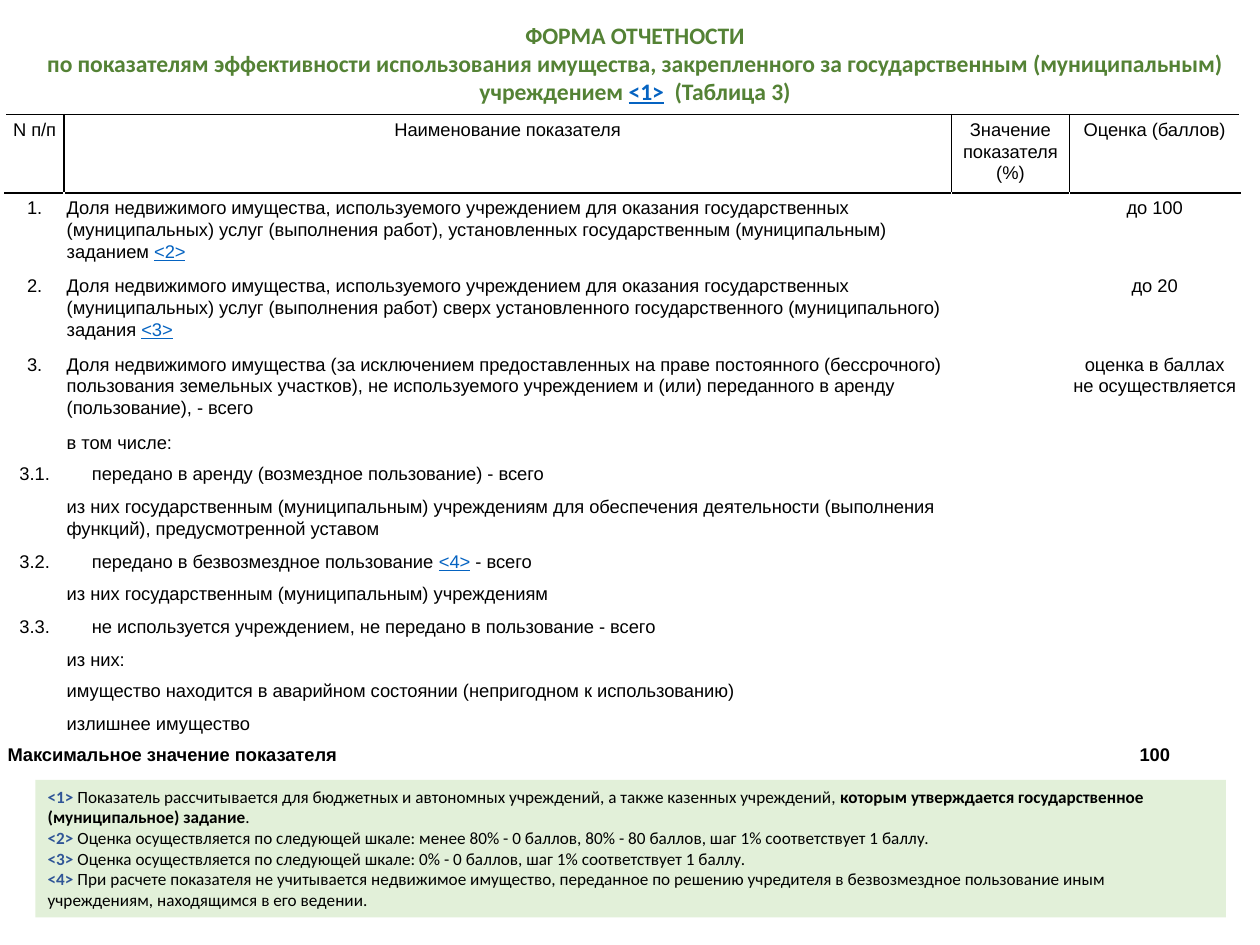
import pptx
import pptx.util
from lxml import etree
from pptx.dml.color import RGBColor
from pptx.enum.shapes import MSO_SHAPE
from pptx.enum.text import MSO_ANCHOR, PP_ALIGN
from pptx.oxml.ns import qn
from pptx.util import Inches, Pt

BLACK = RGBColor(0x00, 0x00, 0x00)
GREEN = RGBColor(0x54, 0x82, 0x35)
PALE_GREEN = RGBColor(0xE2, 0xF0, 0xD9)
BLUE = RGBColor(0x2F, 0x55, 0x97)
LINK = RGBColor(0x05, 0x63, 0xC1)

PLAIN, REFERENCE, STRONG, MARKER = "plain", "reference", "strong", "marker"

TITLE = [
    [("ФОРМА ОТЧЕТНОСТИ", PLAIN)],
    [("по показателям эффективности использования имущества, закрепленного за государственным (муниципальным)", PLAIN)],
    [("учреждением ", PLAIN), ("<1>", REFERENCE), ("  (Таблица 3)", PLAIN)],
]

HEADER = ("N п/п", "Наименование показателя", "Значение показателя (%)", "Оценка (баллов)")
COLUMN_WIDTHS = (0.47, 7.04, 0.94, 1.35)

INDICATORS = [
    (0.58, "1.", [("Доля недвижимого имущества, используемого учреждением для оказания государственных (муниципальных) услуг (выполнения работ), установленных государственным (муниципальным) заданием ", PLAIN), ("<2>", REFERENCE)], "до 100"),
    (0.58, "2.", [("Доля недвижимого имущества, используемого учреждением для оказания государственных (муниципальных) услуг (выполнения работ) сверх установленного государственного (муниципального) задания ", PLAIN), ("<3>", REFERENCE)], "до 20"),
    (0.58, "3.", [("Доля недвижимого имущества (за исключением предоставленных на праве постоянного (бессрочного) пользования земельных участков), не используемого учреждением и (или) переданного в аренду (пользование), - всего", PLAIN)], "оценка в баллах не осуществляется"),
    (0.23, "", [("в том числе:", PLAIN)], ""),
    (0.26, "3.1.", [("передано в аренду (возмездное пользование) - всего", PLAIN)], ""),
    (0.41, "", [("из них государственным (муниципальным) учреждениям для обеспечения деятельности (выполнения функций), предусмотренной уставом", PLAIN)], ""),
    (0.26, "3.2.", [("передано в безвозмездное пользование ", PLAIN), ("<4>", REFERENCE), (" - всего", PLAIN)], ""),
    (0.26, "", [("из них государственным (муниципальным) учреждениям", PLAIN)], ""),
    (0.26, "3.3.", [("не используется учреждением, не передано в пользование - всего", PLAIN)], ""),
    (0.23, "", [("из них:", PLAIN)], ""),
    (0.26, "", [("имущество находится в аварийном состоянии (непригодном к использованию)", PLAIN)], ""),
    (0.23, "", [("излишнее имущество", PLAIN)], ""),
]
TOTAL = (0.23, "Максимальное значение показателя", "100")

NOTES = [
    [("<1> ", MARKER), ("Показатель рассчитывается для бюджетных и автономных учреждений, а также казенных учреждений, ", PLAIN), ("которым утверждается государственное (муниципальное) задание", STRONG), (".", PLAIN)],
    [("<2> ", MARKER), ("Оценка осуществляется по следующей шкале: менее 80% - 0 баллов, 80% - 80 баллов, шаг 1% соответствует 1 баллу.", PLAIN)],
    [("<3> ", MARKER), ("Оценка осуществляется по следующей шкале: 0% - 0 баллов, шаг 1% соответствует 1 баллу.", PLAIN)],
    [("<4> ", MARKER), ("При расчете показателя не учитывается недвижимое имущество, переданное по решению учредителя в безвозмездное пользование иным учреждениям, находящимся в его ведении.", PLAIN)],
]


def set_font(paragraph, name, size, color, bold=False):
    font = paragraph.font
    font.name, font.size, font.bold = name, Pt(size), bold
    font.color.rgb = color


def add_spans(paragraph, spans):
    for text, style in spans:
        span = paragraph.add_run()
        span.text = text
        if style == REFERENCE:
            span.font.color.rgb = LINK
            span.font.underline = True
        elif style == MARKER:
            span.font.color.rgb = BLUE
        if style in (STRONG, MARKER):
            span.font.bold = True


def add_borders(cell, sides):
    properties = cell._tc.get_or_add_tcPr()
    for side in sides:
        line = etree.SubElement(properties, qn(f"a:ln{side}"), w=str(Pt(1)))
        fill = etree.SubElement(line, qn("a:solidFill"))
        etree.SubElement(fill, qn("a:srgbClr"), val=str(BLACK))


def fill_cell(cell, spans, align, sides="", bold=False, indent=0):
    cell.margin_left = cell.margin_right = Inches(0.02)
    cell.margin_top = cell.margin_bottom = Inches(0.03)
    add_borders(cell, sides)
    cell.fill.background()
    para = cell.text_frame.paragraphs[0]
    para.alignment = align
    para.line_spacing = 1.07
    if indent:
        para._p.get_or_add_pPr().set("marL", str(Inches(indent)))
        para._p.get_or_add_pPr().set("indent", "0")
    set_font(para, "Arial", 10.5, BLACK, bold)
    add_spans(para, spans)


def add_title(page):
    box = page.shapes.add_textbox(Inches(0.08), Inches(0.09), Inches(9.92), Inches(0.82))
    frame = box.text_frame
    frame.word_wrap = True
    frame.vertical_anchor = MSO_ANCHOR.MIDDLE
    para = frame.paragraphs[0]
    para.alignment = PP_ALIGN.CENTER
    set_font(para, "Calibri", 13.5, GREEN, True)
    for index, spans in enumerate(TITLE):
        if index:
            para.add_line_break()
        add_spans(para, spans)


def add_indicator_table(page):
    heights = [0.35] + [row[0] for row in INDICATORS] + [TOTAL[0]]
    table = page.shapes.add_table(
        len(heights), len(COLUMN_WIDTHS), Inches(0.04), Inches(0.91),
        Inches(sum(COLUMN_WIDTHS)), Inches(sum(heights))).table
    table.first_row = table.horz_banding = False
    for column, width in zip(table.columns, COLUMN_WIDTHS):
        column.width = Inches(width)
    for row, height in zip(table.rows, heights):
        row.height = Inches(height)

    for column, (label, sides) in enumerate(zip(HEADER, ("RTB", "LRTB", "LRTB", "LTB"))):
        fill_cell(table.cell(0, column), [(label, PLAIN)], PP_ALIGN.CENTER, sides)

    for row, (_, number, name, score) in enumerate(INDICATORS, 1):
        sides = "T" if row == 1 else ""
        indent = 0.2 if number.startswith("3.") and number != "3." else 0
        for column, text in ((0, number), (2, ""), (3, score)):
            spans = [(text, PLAIN)] if text else []
            fill_cell(table.cell(row, column), spans, PP_ALIGN.CENTER, sides)
        fill_cell(table.cell(row, 1), name, PP_ALIGN.LEFT, sides, indent=indent)

    last = len(heights) - 1
    table.cell(last, 0).merge(table.cell(last, 1))
    fill_cell(table.cell(last, 0), [(TOTAL[1], PLAIN)], PP_ALIGN.LEFT, bold=True)
    fill_cell(table.cell(last, 1), [], PP_ALIGN.LEFT)
    fill_cell(table.cell(last, 2), [], PP_ALIGN.CENTER)
    fill_cell(table.cell(last, 3), [(TOTAL[2], PLAIN)], PP_ALIGN.CENTER, bold=True)


def add_notes_panel(page):
    panel = page.shapes.add_shape(
        MSO_SHAPE.RECTANGLE, Inches(0.28), Inches(6.19), Inches(9.45), Inches(1.09))
    panel.shadow.inherit = False
    panel.fill.solid()
    panel.fill.fore_color.rgb = PALE_GREEN
    panel.line.fill.background()
    frame = panel.text_frame
    frame.word_wrap = True
    frame.vertical_anchor = MSO_ANCHOR.TOP
    for index, spans in enumerate(NOTES):
        para = frame.add_paragraph() if index else frame.paragraphs[0]
        para.alignment = PP_ALIGN.LEFT
        set_font(para, "Calibri", 9.8, BLACK)
        add_spans(para, spans)


def main():
    deck = pptx.Presentation()
    deck.slide_width, deck.slide_height = Inches(10), Inches(7.5)
    page = deck.slides.add_slide(deck.slide_layouts[6])
    add_title(page)
    add_indicator_table(page)
    add_notes_panel(page)
    deck.save("out.pptx")


if __name__ == "__main__":
    main()
